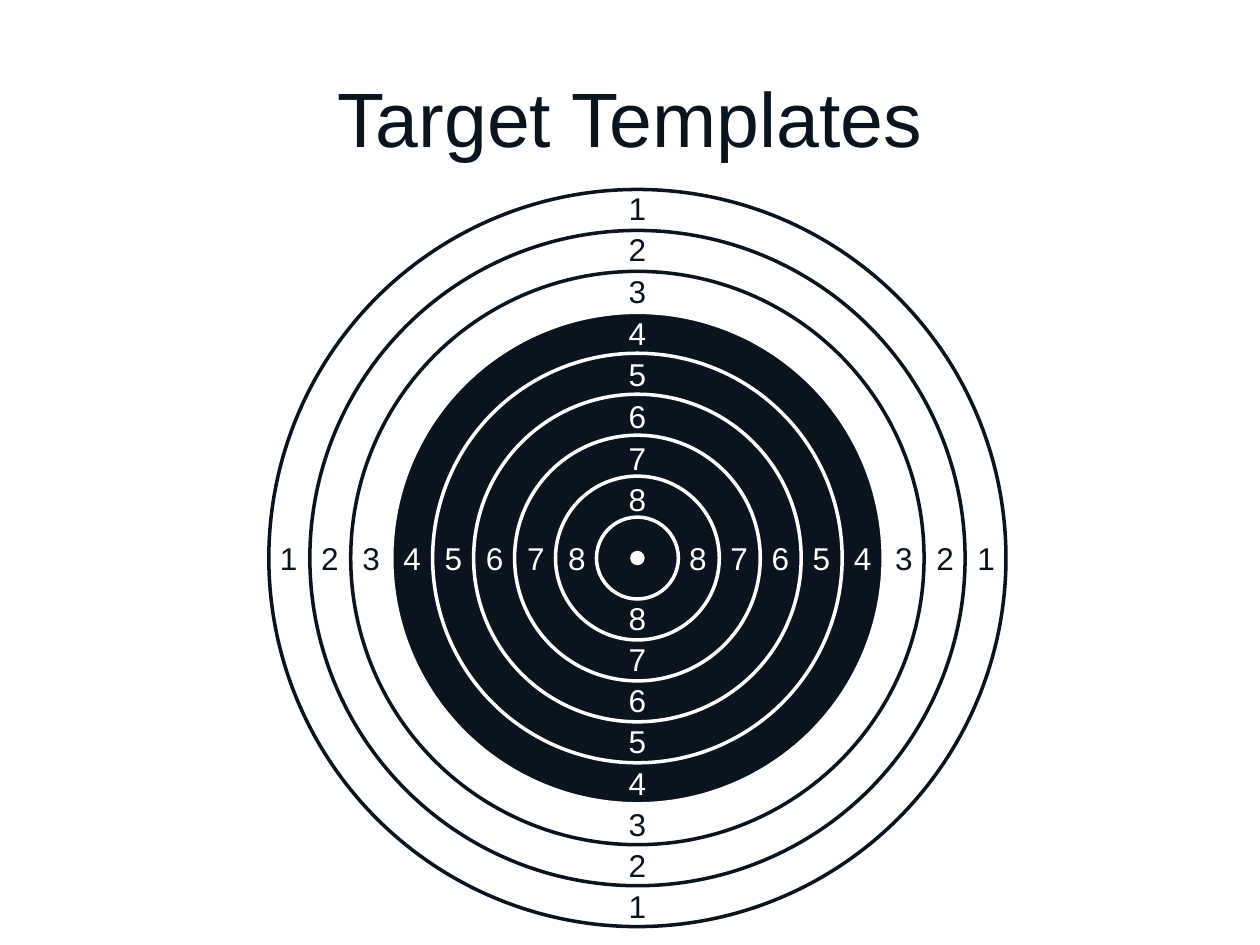
from pptx import Presentation
from pptx.dml.color import RGBColor
from pptx.enum.shapes import MSO_SHAPE
from pptx.enum.text import MSO_ANCHOR, MSO_AUTO_SIZE, PP_ALIGN
from pptx.util import Cm, Pt

TITLE = "Target Templates"
COLOURS = {"ink": "0A141E", "paper": "FFFFFF"}
FONT = "Arial"
BLACK_RINGS = [4, 5, 6, 7, 8, 9]
OPEN_RINGS = [3, 2, 1]
SCORES = ["1", "2", "3", "4", "5", "6", "7", "8"]
ARMS = [
    {"direction": (0, -1), "outer": 7.06, "step": 0.84},
    {"direction": (0, 1), "outer": 7.02, "step": 0.83},
    {"direction": (1, 0), "outer": 7.03, "step": 0.83},
    {"direction": (-1, 0), "outer": 7.03, "step": 0.83},
]
CENTRE_X, CENTRE_Y = 12.85, 11.25
OUTER_RADIUS = 7.43
RING_COUNT = 9
DOT_RADIUS = 0.11
LABEL_WIDTH, LABEL_HEIGHT = 0.85, 1.02


def colour(name):
    return RGBColor.from_string(COLOURS[name])


def style_text(para, size, name):
    for span in para.runs:
        span.font.name = FONT
        span.font.size = Pt(size)
        span.font.color.rgb = colour(name)


def add_circle(page, radius, fill, line):
    circle = page.shapes.add_shape(
        MSO_SHAPE.OVAL, Cm(CENTRE_X - radius), Cm(CENTRE_Y - radius),
        Cm(2 * radius), Cm(2 * radius))
    circle.shadow.inherit = False
    if fill:
        circle.fill.solid()
        circle.fill.fore_color.rgb = colour(fill)
    else:
        circle.fill.background()
    circle.line.color.rgb = colour(line)
    circle.line.width = Pt(2)


def add_ring(page, score, fill, line):
    add_circle(page, OUTER_RADIUS * (RING_COUNT + 1 - score) / RING_COUNT, fill, line)


def add_score(page, score, x, y):
    box = page.shapes.add_textbox(
        Cm(x - LABEL_WIDTH / 2), Cm(y - LABEL_HEIGHT / 2),
        Cm(LABEL_WIDTH), Cm(LABEL_HEIGHT))
    frame = box.text_frame
    frame.text = score
    frame.word_wrap = False
    frame.auto_size = MSO_AUTO_SIZE.SHAPE_TO_FIT_TEXT
    style_text(frame.paragraphs[0], 18, "paper" if int(score) in BLACK_RINGS else "ink")


def add_title(page):
    title = page.shapes.title
    title.left, title.top, title.width, title.height = Cm(1.27), Cm(0.76), Cm(22.86), Cm(3.18)
    title.text_frame.text = TITLE
    title.text_frame.vertical_anchor = MSO_ANCHOR.MIDDLE
    para = title.text_frame.paragraphs[0]
    para.alignment = PP_ALIGN.CENTER
    style_text(para, 44, "ink")


def main():
    deck = Presentation()
    deck.slide_width, deck.slide_height = Cm(25.4), Cm(19.05)
    page = deck.slides.add_slide(deck.slide_layouts[5])
    page.background.fill.solid()
    page.background.fill.fore_color.rgb = colour("paper")
    add_title(page)
    for score in BLACK_RINGS:
        add_ring(page, score, "ink", "paper")
    for score in OPEN_RINGS:
        add_ring(page, score, None, "ink")
    for arm in ARMS:
        across, down = arm["direction"]
        for index, score in enumerate(SCORES):
            distance = arm["outer"] - index * arm["step"]
            add_score(page, score, CENTRE_X + across * distance, CENTRE_Y + down * distance)
    add_circle(page, DOT_RADIUS, "paper", "paper")
    deck.save("out.pptx")


if __name__ == "__main__":
    main()
